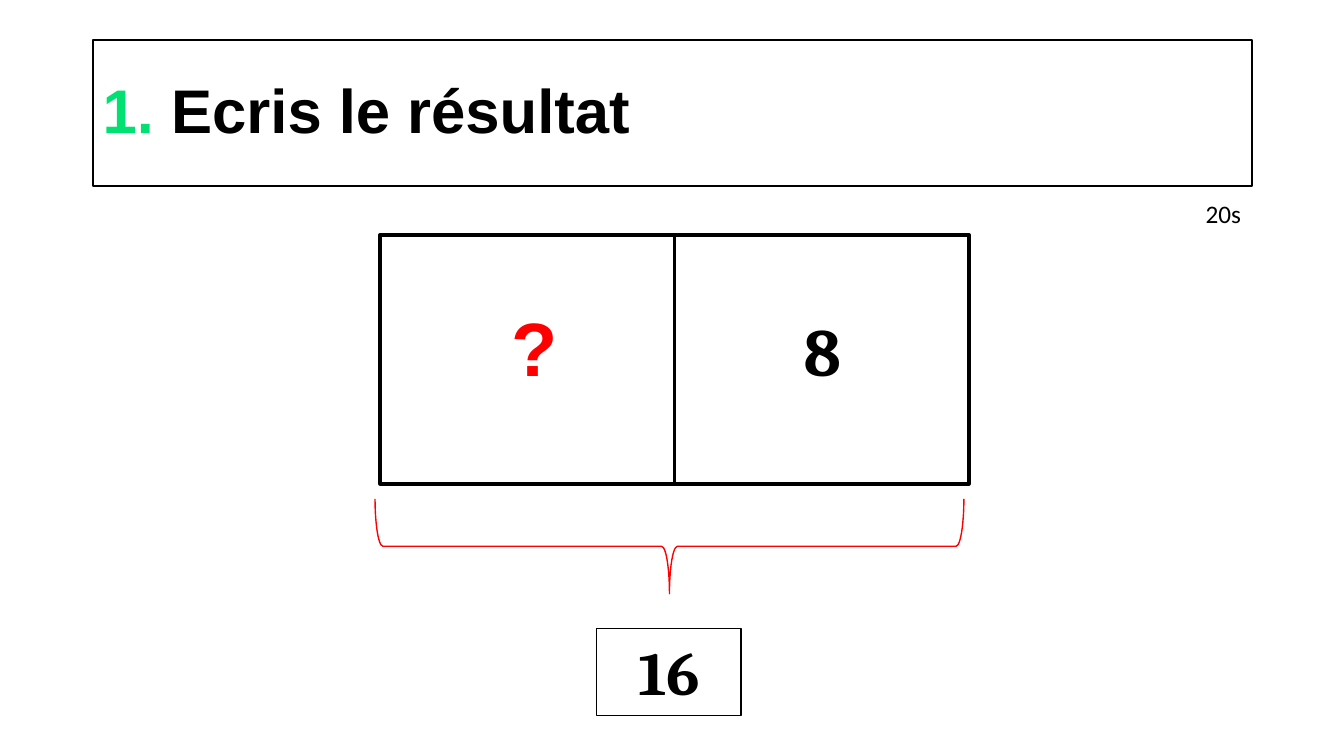
from pptx import Presentation
from pptx import util as u
from pptx.dml.color import RGBColor
from pptx.enum import shapes, text

PX = 9144  # 100 px to the inch
BLACK, RED, GREEN = "000000", "FF0000", "00E172"
KIND = shapes.MSO_SHAPE
ALIGN = text.PP_ALIGN


def emu(*box):
    return [u.Emu(round(n * PX)) for n in box]


def color(code):
    return RGBColor.from_string(code)


def outline(slide, kind, box, width, code=BLACK):
    """Add an unfilled shape with a line."""
    shape = slide.shapes.add_shape(kind, *emu(*box))
    shape.shadow.inherit = False
    shape.fill.background()
    shape.line.color.rgb = color(code)
    shape.line.width = u.Pt(width)
    return shape


def label(slide, box, words, face, size, code=BLACK, bold=True,
          align=ALIGN.CENTER, wrap=True):
    frame = slide.shapes.add_textbox(*emu(*box)).text_frame
    frame.word_wrap = wrap
    write(frame, [(words, code)], face, size, bold, align)


def write(frame, runs, face, size, bold=True, align=ALIGN.CENTER):
    para = frame.paragraphs[0]
    para.alignment = align
    para.font.name, para.font.size, para.font.bold = face, u.Pt(size), bold
    for words, code in runs:
        run = para.add_run()
        run.text = words
        run.font.color.rgb = color(code)
    return para


def header(slide, x, y, w, h):
    frame = outline(slide, KIND.RECTANGLE, (x, y, w, h), 1.5).text_frame
    frame.vertical_anchor = text.MSO_ANCHOR.MIDDLE
    runs = [("1. ", GREEN), ("Ecris le résultat", BLACK)]
    para = write(frame, runs, "Arial", 44, align=ALIGN.LEFT)
    para.line_spacing = 0.9
    label(slide, (x + w - 56, y + h + 7, 56, 40), "20s", "Calibri", 18,
          bold=False, align=ALIGN.LEFT, wrap=False)


def model(slide, x, y, w, h):
    """Draw two equal parts, the brace under them and their total."""
    part = w / 2
    for i in range(2):
        outline(slide, KIND.RECTANGLE, (x + i * part, y, part, h), 2.5)
    label(slide, (x + 75, y + 61, 156, 101), "?", "Arial", 54, RED)
    label(slide, (x + part + 75, y + 69, 143, 91), "8", "Cambria", 48)

    depth = 94
    mid, top = x + part - 5, y + h + 15
    box = (mid - depth / 2, top + depth / 2 - w / 2, depth, w)
    brace = outline(slide, KIND.RIGHT_BRACE, box, 1, RED)
    brace.rotation = 90

    box = (mid - 72, top + depth + 35, 143, 86)
    total = outline(slide, KIND.RECTANGLE, box, 0.75).text_frame
    total.vertical_anchor = text.MSO_ANCHOR.TOP
    write(total, [("16", BLACK)], "Cambria", 44)


def main():
    deck = Presentation()
    deck.slide_width, deck.slide_height = u.Inches(13.33), u.Inches(7.5)
    slide = deck.slides.add_slide(deck.slide_layouts[6])
    header(slide, 92, 40, 1150, 145)
    model(slide, 377, 233, 584, 247)
    deck.save("out.pptx")


if __name__ == "__main__":
    main()
